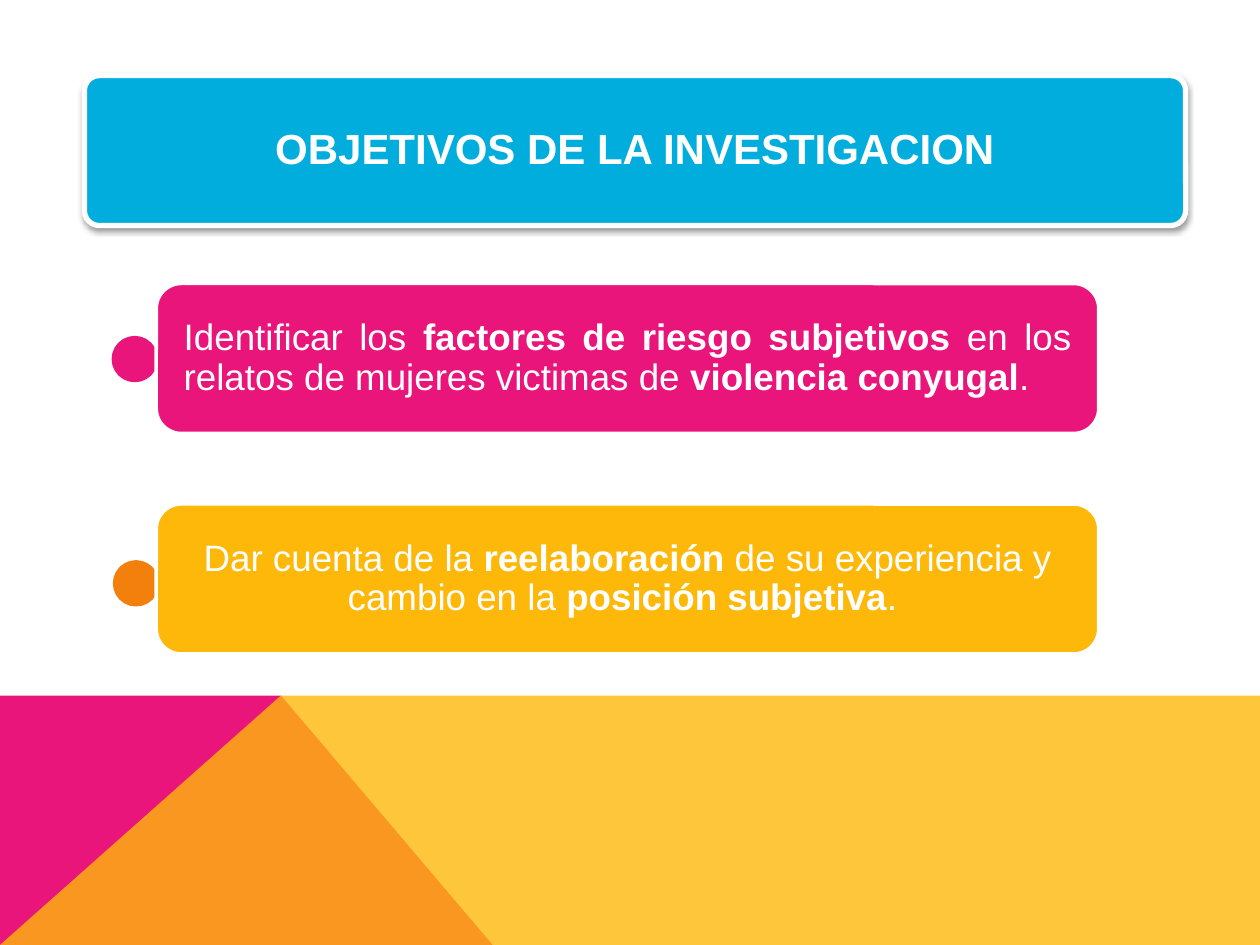
from dataclasses import dataclass

from lxml.etree import SubElement
from pptx import Presentation
from pptx.dml.color import RGBColor
from pptx.enum.shapes import MSO_SHAPE as Shape
from pptx.enum.text import MSO_ANCHOR as Anchor, PP_ALIGN as Align
from pptx.oxml.ns import qn
from pptx.util import Inches, Pt

# The slide is a grid of 100 columns and 75 rows
COLUMNS, ROWS = 100, 75
CELL = Inches(0.1)

WHITE, BLUE, PINK, YELLOW, ORANGE = "FFFFFF", "00ADDC", "EA157A", "FEB80A", "F3800D"
BAND_TOP, PEAK, FOOT = 55.2, 22.3, 39.1


@dataclass
class Card:
    column: float
    row: float
    width: float
    height: float
    fill: str
    border: float
    corner: float
    size: int
    align: Align
    insets: tuple[float, float]  # sides, top and bottom
    spans: list[tuple[str, bool]]  # wording, bold


@dataclass
class Dot:
    column: float
    row: float
    fill: str


def objective(row: float, fill: str, align: Align, spans: list[tuple[str, bool]]) -> Card:
    return Card(12.4, row, 74.8, 11.9, fill, 2, 0.167, 21, align, (1.6, 1.6), spans)


TITLE = Card(6.7, 6, 87.4, 11.9, BLUE, 3, 0.1, 24, Align.CENTER, (0.5, 0.3),
             [("OBJETIVOS DE LA INVESTIGACION", True)])
OBJECTIVES = [
    objective(22.5, PINK, Align.JUSTIFY, [
        ("Identificar los ", False), ("factores de riesgo subjetivos ", True),
        ("en los relatos de mujeres victimas de ", False),
        ("violencia conyugal", True), (".", False)]),
    objective(40, YELLOW, Align.CENTER, [
        ("Dar cuenta de la ", False), ("reelaboración ", True),
        ("de su experiencia y cambio en la ", False),
        ("posición subjetiva", True), (". ", False)]),
]
DOTS = [Dot(9.1, 44.6, ORANGE), Dot(9, 26.8, PINK)]


def cells(count: float) -> int:
    return round(count * CELL)


def paint(target, color: str) -> None:
    target.solid()
    target.fore_color.rgb = RGBColor.from_string(color)


def style(shape, fill: str, border: str | None = None, width: float = 0) -> None:
    shape.shadow.inherit = False
    paint(shape.fill, fill)
    if border:
        paint(shape.line.fill, border)
        shape.line.width = Pt(width)
    else:
        shape.line.fill.background()


def set_alpha(color, percent: int) -> None:
    SubElement(color, qn("a:alpha"), val=str(percent * 1000))


def draw_polygon(page, points: list[tuple[float, float]], fill: str, alpha: int = 100) -> None:
    start, *rest = [(cells(column), cells(row)) for column, row in points]
    builder = page.shapes.build_freeform(*start, scale=1.0)
    builder.add_line_segments(rest, close=True)
    polygon = builder.convert_to_shape()
    style(polygon, fill)
    if alpha < 100:
        set_alpha(polygon.element.spPr.find(".//" + qn("a:srgbClr")), alpha)


def draw_dot(page, dot: Dot) -> None:
    circle = page.shapes.add_shape(
        Shape.OVAL, cells(dot.column), cells(dot.row), cells(3.4), cells(3.4))
    style(circle, dot.fill, dot.fill, 2)


def draw_card(page, card: Card):
    box = page.shapes.add_shape(
        Shape.ROUNDED_RECTANGLE, cells(card.column), cells(card.row),
        cells(card.width), cells(card.height))
    box.adjustments[0] = card.corner
    style(box, card.fill, WHITE, card.border)
    side, edge = map(cells, card.insets)
    frame_format = {
        "word_wrap": True, "vertical_anchor": Anchor.MIDDLE,
        "margin_left": side, "margin_right": side,
        "margin_top": edge, "margin_bottom": edge,
    }
    for name, value in frame_format.items():
        setattr(box.text_frame, name, value)
    para = box.text_frame.paragraphs[0]
    para.alignment, para.line_spacing = card.align, 0.9
    for wording, bold in card.spans:
        span = para.add_run()
        span.text = wording
        for name, value in {"name": "Arial", "size": Pt(card.size), "bold": bold}.items():
            setattr(span.font, name, value)
        paint(span.font.fill, WHITE)
    return box


def add_shadow(shape) -> None:
    effects = shape.element.spPr.find(qn("a:effectLst"))
    shadow = SubElement(effects, qn("a:outerShdw"), blurRad=str(Pt(3.1)),
                        dist=str(Pt(1.6)), dir=str(90 * 60000), rotWithShape="0")
    set_alpha(SubElement(shadow, qn("a:srgbClr"), val="000000"), 38)


def main() -> None:
    deck = Presentation()
    deck.slide_width, deck.slide_height = cells(COLUMNS), cells(ROWS)
    page = deck.slides.add_slide(deck.slide_layouts[6])

    # Coloured band along the bottom
    draw_polygon(page, [(0, ROWS), (0, BAND_TOP), (PEAK, BAND_TOP), (FOOT, ROWS)], PINK)
    draw_polygon(page, [(0, ROWS), (PEAK, BAND_TOP), (COLUMNS, BAND_TOP), (COLUMNS, ROWS)],
                 YELLOW, alpha=80)

    # Title, then the objectives over their dots
    add_shadow(draw_card(page, TITLE))
    for dot in DOTS:
        draw_dot(page, dot)
    for card in OBJECTIVES:
        draw_card(page, card)

    deck.save("out.pptx")


if __name__ == "__main__":
    main()
